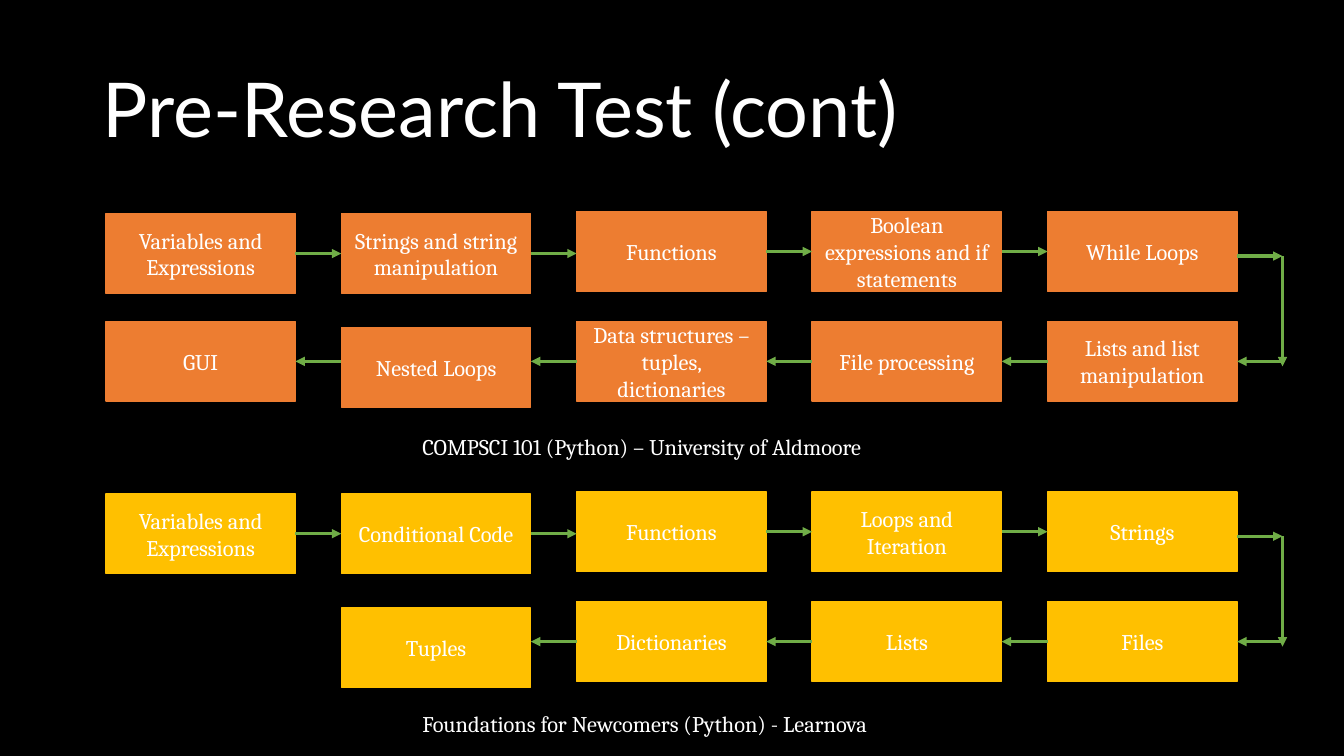
from dataclasses import dataclass
from typing import Any

from lxml import etree
from pptx import Presentation
from pptx.dml.color import RGBColor
from pptx.enum import shapes, text
from pptx.oxml import ns
from pptx.util import Inches, Pt

COLORS = {"black": "000000", "white": "FFFFFF", "orange": "ED7D31",
          "gold": "FFC000", "green": "70AD47"}
COLS = 5
LEFT, LAST = 1.05, 10.39
STEP = (LAST - LEFT) / (COLS - 1)
WIDE, HIGH = 1.88, 0.79
ROW_GAP = 1.09
TURN = 12.72  # x of the arrow that leads down to the lower row
UPPER_DROP = {0: 0.02, 1: 0.02}
LOWER_DROP = {1: 0.06}


@dataclass
class Course:
    name: str
    color: str
    top: float
    label: float
    topics: list[str]


@dataclass
class Box:
    shape: Any
    left: float
    mid: float


COURSES = [
    Course("COMPSCI 101 (Python) – University of Aldmoore", "orange", 2.1, 4.25,
           ["Variables and Expressions", "Strings and string manipulation",
            "Functions", "Boolean expressions and if statements", "While Loops",
            "Lists and list manipulation", "File processing",
            "Data structures – tuples, dictionaries", "Nested Loops", "GUI"]),
    Course("Foundations for Newcomers (Python) - Learnova", "gold", 4.88, 7,
           ["Variables and Expressions", "Conditional Code", "Functions",
            "Loops and Iteration", "Strings", "Files", "Lists",
            "Dictionaries", "Tuples"]),
]


def color(name: str) -> RGBColor:
    return RGBColor.from_string(COLORS[name])


def write(frame: Any, words: str, size: float, font: str) -> None:
    frame.text = words
    style = frame.paragraphs[0].runs[0].font
    style.size, style.name = Pt(size), font
    style.color.rgb = color("white")


def add_box(group: Any, words: str, fill: str, left: float, top: float) -> Box:
    shape = group.shapes.add_shape(
        shapes.MSO_SHAPE.RECTANGLE,
        Inches(left), Inches(top), Inches(WIDE), Inches(HIGH))
    shape.shadow.inherit = False
    shape.fill.solid()
    shape.fill.fore_color.rgb = color(fill)
    shape.line.color.rgb = color(fill)
    shape.line.width = Pt(1)
    frame = shape.text_frame
    frame.word_wrap = True
    frame.vertical_anchor = text.MSO_ANCHOR.MIDDLE
    write(frame, words, 16, "Cambria")
    frame.paragraphs[0].alignment = text.PP_ALIGN.CENTER
    return Box(shape, left, top + HIGH / 2)


def add_arrow(group: Any, x1: float, y1: float, x2: float, y2: float) -> Any:
    arrow = group.shapes.add_connector(
        shapes.MSO_CONNECTOR.STRAIGHT,
        Inches(x1), Inches(y1), Inches(x2), Inches(y2))
    arrow.line.color.rgb = color("green")
    arrow.line.width = Pt(2.25)
    line = arrow.line._get_or_add_ln()
    etree.SubElement(line, ns.qn("a:tailEnd"), type="triangle")
    etree.SubElement(arrow._element.spPr, ns.qn("a:effectLst"))
    return arrow


def link(group: Any, start: Box, end: Box, y: float) -> None:
    """Draw a level arrow, joined to each box whose middle lies on it."""
    right = start.left < end.left
    x1 = start.left + (WIDE if right else 0)
    x2 = end.left + (0 if right else WIDE)
    arrow = add_arrow(group, x1, y, x2, y)
    if abs(start.mid - y) < 0.01:
        arrow.begin_connect(start.shape, 3 if right else 1)
    if abs(end.mid - y) < 0.01:
        arrow.end_connect(end.shape, 1 if right else 3)


def add_flow(slide: Any, course: Course) -> None:
    """Draw the topics rightwards, then back leftwards on a lower row."""
    group = slide.shapes.add_group_shape()
    low = course.top + ROW_GAP
    boxes = []
    for i, topic in enumerate(course.topics):
        upper = i < COLS
        col = i if upper else 2 * COLS - 1 - i
        top = (course.top + UPPER_DROP.get(col, 0) if upper
               else low + LOWER_DROP.get(col, 0))
        boxes.append(add_box(group, topic, course.color, LEFT + col * STEP, top))

    above, below = boxes[:COLS], boxes[COLS:]
    for start, end in zip(above, above[1:]):
        link(group, start, end, start.mid)

    edge = above[-1].left + WIDE
    out, back = course.top + 0.44, low + HIGH / 2
    add_arrow(group, edge, out, TURN, out)
    add_arrow(group, TURN, out, TURN, back + 0.05)
    add_arrow(group, TURN, back, edge, back).end_connect(below[0].shape, 3)

    for start, end in zip(below, below[1:]):
        link(group, start, end, back)


def add_title(slide: Any) -> None:
    box = slide.shapes.add_textbox(
        Inches(0.92), Inches(0.4), Inches(11.5), Inches(1.45))
    frame = box.text_frame
    frame.word_wrap = True
    frame.vertical_anchor = text.MSO_ANCHOR.MIDDLE
    write(frame, "Pre-Research Test (cont)", 54, "Lato")
    frame.paragraphs[0].line_spacing = 0.9


def add_label(slide: Any, course: Course) -> None:
    box = slide.shapes.add_textbox(
        Inches(4.09), Inches(course.label), Inches(4.85), Inches(0.37))
    frame = box.text_frame
    frame.word_wrap = False
    frame.auto_size = text.MSO_AUTO_SIZE.SHAPE_TO_FIT_TEXT
    write(frame, course.name, 16, "Cambria")


def main() -> None:
    deck = Presentation()
    deck.slide_width, deck.slide_height = Inches(13.33), Inches(7.5)
    slide = deck.slides.add_slide(deck.slide_layouts[6])
    back = slide.background.fill
    back.solid()
    back.fore_color.rgb = color("black")
    add_title(slide)
    for course in COURSES:
        add_flow(slide, course)
        add_label(slide, course)
    deck.save("out.pptx")


if __name__ == "__main__":
    main()
